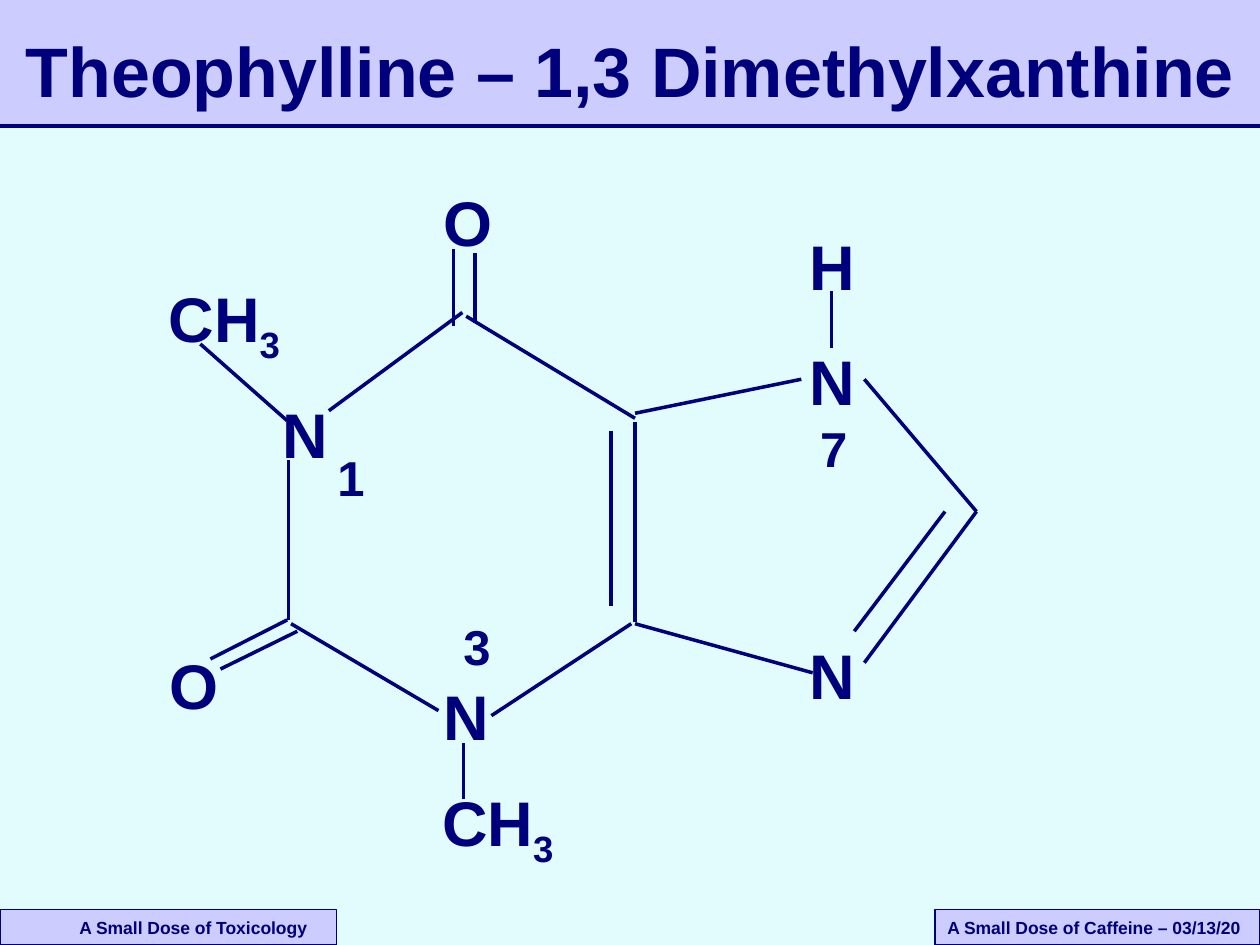
from dataclasses import dataclass

from lxml import etree
from pptx import Presentation
from pptx import util as u
from pptx.dml.color import RGBColor
from pptx.enum import shapes, text
from pptx.oxml.ns import qn


@dataclass(frozen=True)
class Theme:
    font: str = "Arial"
    ink: RGBColor = RGBColor(0x00, 0x00, 0x7D)
    band: RGBColor = RGBColor(0xCC, 0xCC, 0xFF)
    paper: RGBColor = RGBColor(0xE2, 0xFC, 0xFE)
    title: int = 40
    atom: int = 36
    locant: int = 28
    footer: int = 10
    bond: float = 2
    border: float = 0.75


class SlideBuilder:
    def __init__(self, s, theme):
        self.s = s
        self.theme = theme
        fill = s.background.fill
        fill.solid()
        fill.fore_color.rgb = theme.paper

    def run(self, p, content, size, subscript=False):
        r = p.add_run()
        r.text = content
        r.font.name = self.theme.font
        r.font.size = u.Pt(size)
        r.font.bold = True
        r.font.color.rgb = self.theme.ink
        if subscript:
            r.font._element.set("baseline", "-25000")

    def panel(self, x, y, w, h, border=None):
        sp = self.s.shapes.add_shape(
            shapes.MSO_SHAPE.RECTANGLE, *map(u.Inches, (x, y, w, h)))
        sp.shadow.inherit = False
        sp.fill.solid()
        sp.fill.fore_color.rgb = self.theme.band
        if border:
            sp.line.color.rgb = self.theme.ink
            sp.line.width = u.Pt(border)
        else:
            sp.line.fill.background()
        return sp

    def footer(self, x, w, content, inset=0.1):
        tf = self.panel(x, 7.22, w, 0.28, self.theme.border).text_frame
        tf.word_wrap = True
        tf.vertical_anchor = text.MSO_ANCHOR.MIDDLE
        tf.margin_left = u.Inches(inset)
        tf.margin_right = 0
        p = tf.paragraphs[0]
        p.alignment = text.PP_ALIGN.LEFT
        self.run(p, content, self.theme.footer)

    def textbox(self, x, y, w, h, wrap=False):
        tf = self.s.shapes.add_textbox(*map(u.Inches, (x, y, w, h))).text_frame
        tf.word_wrap = wrap
        return tf

    def title(self, content):
        tf = self.textbox(0, 0.17, 10, 0.76, wrap=True)
        tf.vertical_anchor = text.MSO_ANCHOR.MIDDLE
        p = tf.paragraphs[0]
        p.alignment = text.PP_ALIGN.CENTER
        self.run(p, content, self.theme.title)

    def atom(self, x, y, symbol, w=0.56, count=None):
        p = self.textbox(x, y, w, 0.7).paragraphs[0]
        self.run(p, symbol, self.theme.atom)
        if count:
            self.run(p, count, self.theme.atom, subscript=True)

    def locant(self, x, y, number):
        p = self.textbox(x, y, 0.41, 0.56).paragraphs[0]
        self.run(p, number, self.theme.locant)

    def line(self, x1, y1, x2, y2):
        c = self.s.shapes.add_connector(
            shapes.MSO_CONNECTOR.STRAIGHT, *map(u.Inches, (x1, y1, x2, y2)))
        c.line.color.rgb = self.theme.ink
        c.line.width = u.Pt(self.theme.bond)
        etree.SubElement(c._element.spPr, qn("a:effectLst"))


SIX_RING = [
    (2.61, 3.26, 3.67, 2.48),
    (3.7, 2.51, 5.04, 3.32),
    (5.04, 3.35, 5.04, 4.94),
    (4.85, 3.42, 4.85, 4.81),
    (3.9, 5.68, 5.01, 4.95),
    (2.31, 4.95, 3.48, 5.64),
    (2.29, 3.65, 2.29, 4.92),
]
FIVE_RING = [
    (6.36, 3.01, 5.04, 3.28),
    (6.86, 3.01, 7.75, 4.06),
    (6.86, 5.26, 7.75, 4.06),
    (6.78, 5.01, 7.5, 4.06),
    (6.45, 5.34, 5.04, 4.95),
]
SIDE_BONDS = [
    (6.6, 2.76, 6.6, 2.31),
    (3.68, 6.34, 3.68, 5.9),
    (2.28, 3.34, 1.59, 2.73),
    (2.28, 4.92, 1.67, 5.23),
    (2.36, 5.01, 1.75, 5.31),
    (3.77, 2.01, 3.77, 2.56),
    (3.6, 2.59, 3.6, 1.98),
]
ATOMS = [
    (2.14, 3.09, "N"),
    (3.42, 5.33, "N"),
    (6.33, 5, "N"),
    (6.33, 2.67, "N"),
    (6.33, 1.76, "H"),
    (1.25, 5.08, "O", 0.6),
    (3.42, 1.41, "O", 0.6),
    (3.41, 6.17, "CH", 1.11, "3"),
    (1.24, 2.17, "CH", 1.11, "3"),
]
LOCANTS = [(2.58, 3.5, "1"), (3.58, 4.84, "3"), (6.41, 3.27, "7")]


def main():
    prs = Presentation()
    prs.slide_width, prs.slide_height = u.Inches(10), u.Inches(7.5)
    b = SlideBuilder(prs.slides.add_slide(prs.slide_layouts[6]), Theme())

    b.panel(0, 0, 10, 1)
    b.line(0, 1, 10, 1)
    b.footer(0, 2.67, "A Small Dose of Toxicology", inset=0.63)
    b.footer(7.42, 2.58, "A Small Dose of Caffeine – 03/13/20")
    b.title("Theophylline – 1,3 Dimethylxanthine")

    for bond in SIX_RING + FIVE_RING + SIDE_BONDS:
        b.line(*bond)
    for atom in ATOMS:
        b.atom(*atom)
    for locant in LOCANTS:
        b.locant(*locant)

    prs.save("out.pptx")


if __name__ == "__main__":
    main()
